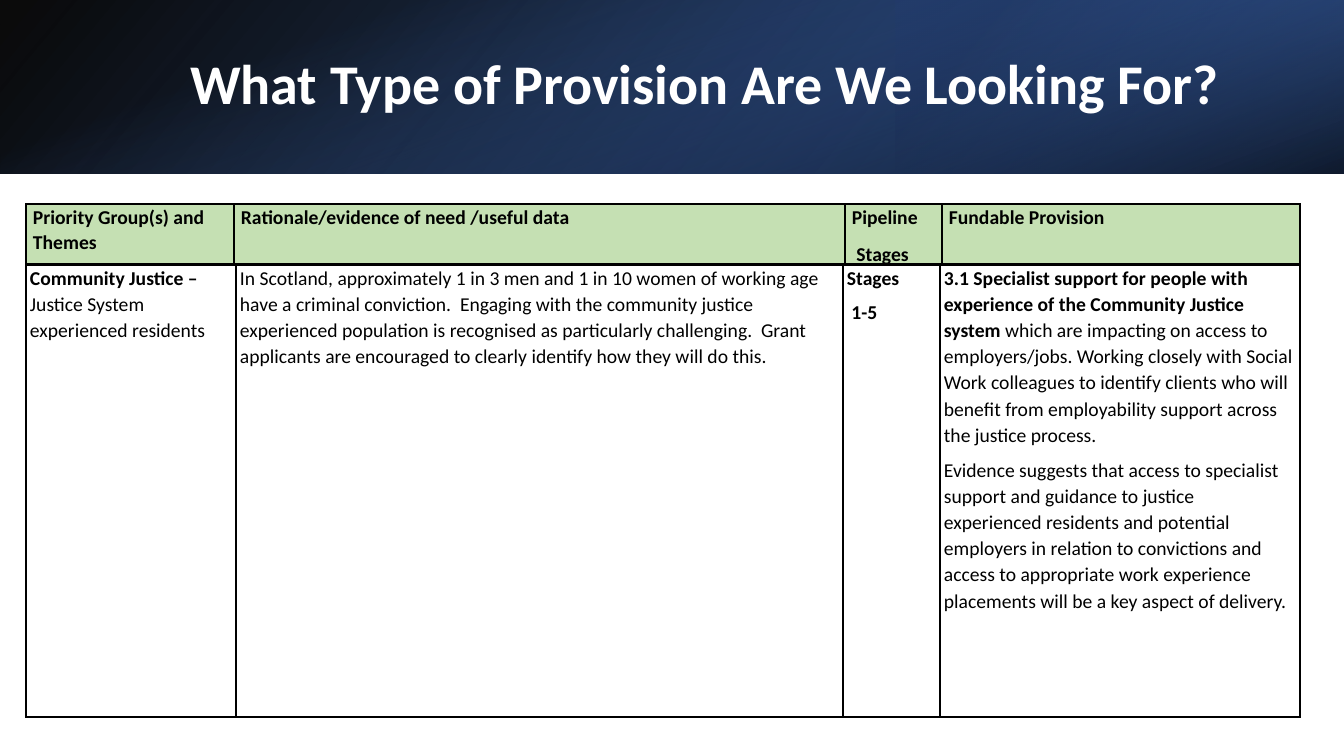
from lxml.etree import SubElement
from pptx import Presentation
from pptx.dml.color import RGBColor
from pptx.enum.shapes import MSO_SHAPE
from pptx.enum.text import MSO_ANCHOR, PP_ALIGN
from pptx.oxml.ns import qn
from pptx.util import Emu, Pt

PX = 914400 / 100.8
BLACK = RGBColor(0x00, 0x00, 0x00)
WHITE = RGBColor(0xFF, 0xFF, 0xFF)
NAVY = RGBColor(0x20, 0x38, 0x64)
DEEP_BLUE = RGBColor(0x2F, 0x55, 0x97)
BLUE = RGBColor(0x44, 0x72, 0xC4)
GREEN = RGBColor(0xC5, 0xE0, 0xB3)


def px(*lengths):
    return [Emu(round(length * PX)) for length in lengths]


def write(frame, paragraphs, size=14, color=BLACK, align=PP_ALIGN.LEFT, spacing=1.0, after=0):
    """Fill a text frame; each paragraph is a list of (text, bold) pairs."""
    frame.word_wrap = True
    for index, spans in enumerate(paragraphs):
        para = frame.add_paragraph() if index else frame.paragraphs[0]
        para.alignment = align
        para.line_spacing = spacing
        para.space_after = Pt(after)
        for text, bold in spans:
            span = para.add_run()
            span.text = text
            span.font.name = "Calibri"
            span.font.size = Pt(size)
            span.font.bold = bold
            span.font.color.rgb = color


deck = Presentation()
deck.slide_width, deck.slide_height = px(1344, 756)
page = deck.slides.add_slide(deck.slide_layouts[6])

# Banner: three layered gradients of (position, colour, opacity in percent)
banner_layers = [
    ((0, 0, 1344, 174), 0, True, 140, [(0, BLACK, 96), (100, DEEP_BLUE, 100)]),
    ((896, 0, 448, 174), 180, True, 320, [(19, NAVY, 68), (100, BLUE, 79)]),
    ((585, -585, 174, 1344), 90, False, 340, [(23, BLUE, 0), (99, BLACK, 74)]),
]
for bounds, rotation, flipped, angle, stops in banner_layers:
    layer = page.shapes.add_shape(MSO_SHAPE.RECTANGLE, *px(*bounds))
    layer.shadow.inherit = False
    layer.rotation = rotation
    if flipped:
        layer._element.spPr.xfrm.set("flipH", "1")
    layer.line.fill.background()
    layer.fill.gradient()
    layer.fill.gradient_angle = 360 - angle
    for stop, (position, color, opacity) in zip(layer.fill.gradient_stops, stops):
        stop.position = position / 100
        stop.color.rgb = color
    for node, (position, color, opacity) in zip(layer._element.spPr.iter(qn("a:srgbClr")), stops):
        SubElement(node, qn("a:alpha"), val=str(opacity * 1000))

title = page.shapes.add_textbox(*px(151, 38, 1107, 97))
title.text_frame.vertical_anchor = MSO_ANCHOR.MIDDLE
write(title.text_frame, [[("What Type of Provision Are We Looking For?", True)]],
      size=40, color=WHITE, align=PP_ALIGN.CENTER, spacing=0.9)

header_cells = [
    [[("Priority Group(s) and Themes", True)]],
    [[("Rationale/evidence of need /useful data", True)]],
    [[("Pipeline", True)], [(" Stages", True)]],
    [[("Fundable Provision", True)]],
]
body_cells = [
    [[("Community Justice – ", True), ("Justice System experienced residents", False)]],
    [[("In Scotland, approximately 1 in 3 men and 1 in 10 women of working age have a criminal "
       "conviction.  Engaging with the community justice experienced population is recognised as "
       "particularly challenging.\u00a0 Grant applicants are encouraged to clearly identify how "
       "they will do this.", False)]],
    [[("Stages", True)], [(" 1-5", True)]],
    [[("3.1 Specialist support for people with experience of the Community Justice system ", True),
      ("which are impacting on access to employers/jobs. Working closely with Social Work "
       "colleagues to identify clients who will benefit from employability support across the "
       "justice process.", False)],
     [("Evidence suggests that access to specialist support and guidance to justice experienced "
       "residents and potential employers in relation to convictions and access to appropriate "
       "work experience placements will be a key aspect of delivery.", False)]],
]

# Each table: top, height, column widths, side margin, fill, line spacing, space after, cells
tables = [
    (204, 60, [208, 611, 97, 358], 7, GREEN, 1.07, 8, header_cells),
    (264, 453, [210, 607, 97, 360], 4, None, 1.1, 6, body_cells),
]
for top, height, widths, margin, fill, spacing, after, cells in tables:
    frame = page.shapes.add_table(1, len(widths), *px(26, top, sum(widths), height))
    table = frame.table
    table.first_row = table.horz_banding = False
    for column, width, cell, paragraphs in zip(table.columns, px(*widths),
                                               table.rows[0].cells, cells):
        column.width = width
        cell.margin_left, cell.margin_right, cell.margin_top, cell.margin_bottom = px(
            margin, margin, 0, 0)
        write(cell.text_frame, paragraphs, spacing=spacing, after=after)
        properties = cell._tc.get_or_add_tcPr()
        for side in ("a:lnL", "a:lnR", "a:lnT", "a:lnB"):
            border = SubElement(properties, qn(side), w=str(Pt(1)))
            SubElement(SubElement(border, qn("a:solidFill")), qn("a:srgbClr"), val=str(BLACK))
        if fill is None:
            cell.fill.background()
        else:
            cell.fill.solid()
            cell.fill.fore_color.rgb = fill

deck.save("out.pptx")
